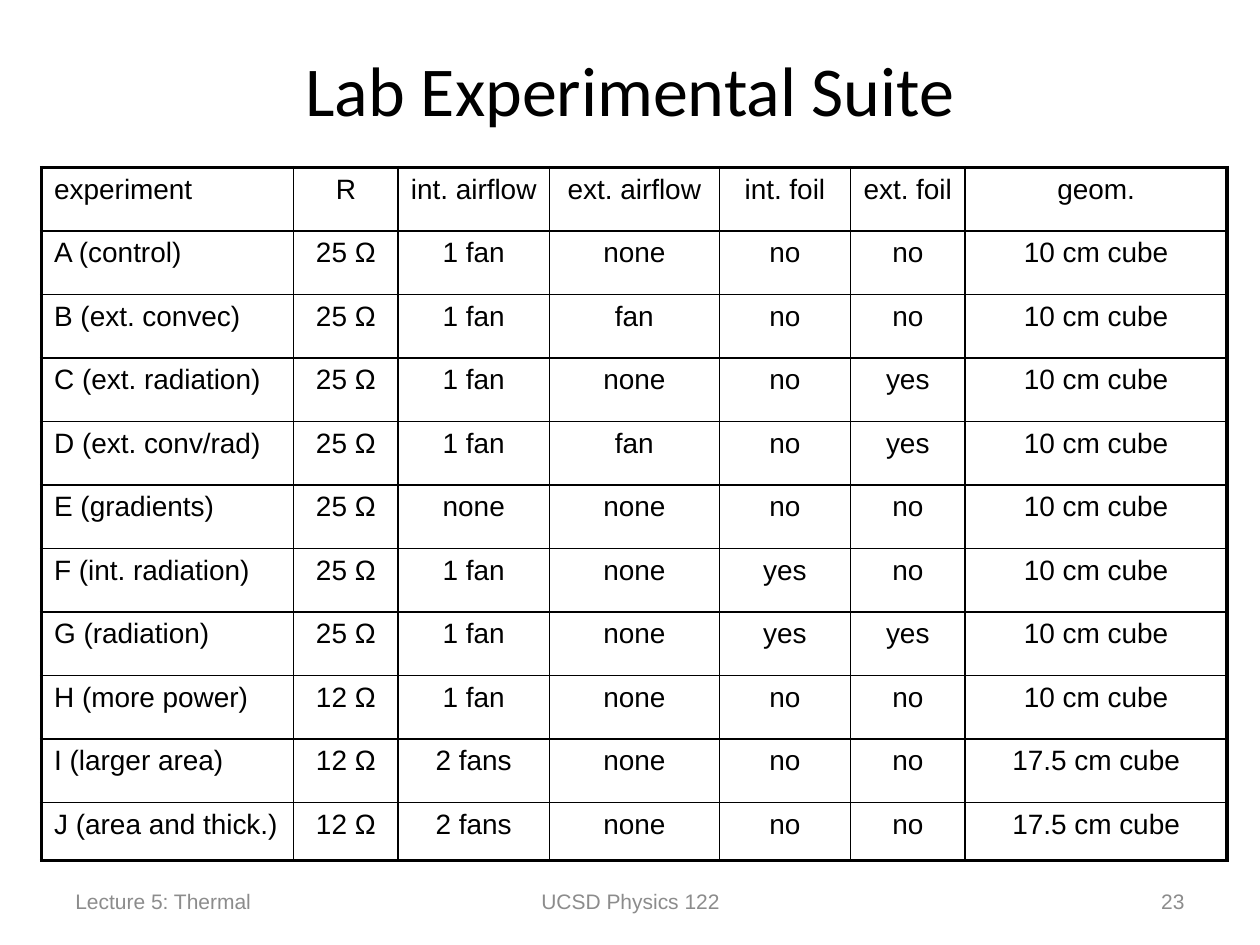
from typing import NamedTuple

from lxml.etree import SubElement
from pptx import Presentation
from pptx.dml.color import RGBColor
from pptx.enum.text import MSO_ANCHOR, PP_ALIGN
from pptx.oxml.ns import qn
from pptx.util import Inches, Pt

BLACK, GRAY = "000000", "8C8C8C"
THIN, THICK = 1, 2.25  # border widths in points

# Table content and measures in inches
HEADINGS = ("experiment", "R", "int. airflow", "ext. airflow",
            "int. foil", "ext. foil", "geom.")
COLUMN_WIDTHS = (2, 0.83, 1.2, 1.35, 1.04, 0.91, 2.08)
TABLE_HEIGHT, LAST_ROW_HEIGHT = 5.5, 0.46


class Experiment(NamedTuple):
    name: str
    resistance: str = "25 Ω"
    internal_airflow: str = "1 fan"
    external_airflow: str = "none"
    internal_foil: str = "no"
    external_foil: str = "no"
    geometry: str = "10 cm cube"


EXPERIMENTS = (
    Experiment("A (control)"),
    Experiment("B (ext. convec)", external_airflow="fan"),
    Experiment("C (ext. radiation)", external_foil="yes"),
    Experiment("D (ext. conv/rad)", external_airflow="fan", external_foil="yes"),
    Experiment("E (gradients)", internal_airflow="none"),
    Experiment("F (int. radiation)", internal_foil="yes"),
    Experiment("G (radiation)", internal_foil="yes", external_foil="yes"),
    Experiment("H (more power)", resistance="12 Ω"),
    Experiment("I (larger area)", "12 Ω", "2 fans", geometry="17.5 cm cube"),
    Experiment("J (area and thick.)", "12 Ω", "2 fans", geometry="17.5 cm cube"),
)


class Label(NamedTuple):
    text: str
    left: float
    top: float
    width: float
    height: float
    align: PP_ALIGN
    size: float = 12
    font: str = "Arial"
    color: str = GRAY


LABELS = (
    Label("Lab Experimental Suite", 0.75, 0.08, 8.5, 1.25, PP_ALIGN.CENTER,
          40, "Calibri", BLACK),
    Label("Lecture 5: Thermal", 0.5, 6.95, 2.33, 0.4, PP_ALIGN.LEFT),
    Label("UCSD Physics 122", 3.42, 6.95, 3.17, 0.4, PP_ALIGN.CENTER),
    Label("23", 7.17, 6.95, 2.33, 0.4, PP_ALIGN.RIGHT),
)


def hex_color(value: str) -> RGBColor:
    return RGBColor.from_string(value)


def write_text(frame, text: str, *, size: float, font: str = "Arial",
               color: str = BLACK, align: PP_ALIGN = PP_ALIGN.LEFT) -> None:
    para = frame.paragraphs[0]
    para.alignment = align
    span = para.add_run()
    span.text = text
    span.font.size = Pt(size)
    span.font.name = font
    span.font.color.rgb = hex_color(color)


def add_label(page, label: Label) -> None:
    box = page.shapes.add_textbox(Inches(label.left), Inches(label.top),
                                  Inches(label.width), Inches(label.height))
    frame = box.text_frame
    frame.word_wrap = True
    frame.vertical_anchor = MSO_ANCHOR.MIDDLE
    write_text(frame, label.text, size=label.size, font=label.font,
               color=label.color, align=label.align)


def set_borders(cell, **widths: float) -> None:
    """Draw the sides L, R, T, B (in that order) ahead of the cell's fill."""
    properties = cell._tc.get_or_add_tcPr()
    for position, (side, width) in enumerate(widths.items()):
        line = SubElement(properties, qn(f"a:ln{side}"), w=str(Pt(width)))
        fill = SubElement(line, qn("a:solidFill"))
        SubElement(fill, qn("a:srgbClr"), val=BLACK)
        properties.insert(position, line)


def add_experiment_table(page) -> None:
    rows = (HEADINGS, *EXPERIMENTS)
    last_row, last_column = len(rows) - 1, len(HEADINGS) - 1
    table = page.shapes.add_table(
        len(rows), len(HEADINGS), Inches(0.33), Inches(1.33),
        Inches(sum(COLUMN_WIDTHS)), Inches(TABLE_HEIGHT)).table
    table.first_row = table.horz_banding = False

    for column, width in zip(table.columns, COLUMN_WIDTHS):
        column.width = Inches(width)
    for row in table.rows:
        row.height = Inches((TABLE_HEIGHT - LAST_ROW_HEIGHT) / last_row)
    table.rows[last_row].height = Inches(LAST_ROW_HEIGHT)

    for r, values in enumerate(rows):
        for c, text in enumerate(values):
            cell = table.cell(r, c)
            cell.fill.background()
            write_text(cell.text_frame, text, size=16,
                       align=PP_ALIGN.CENTER if c else PP_ALIGN.LEFT)
            set_borders(cell,
                        L=THICK if c == 0 else THIN,
                        R=THICK if c == last_column else THIN,
                        T=THICK if r == 0 else THIN,
                        B=THICK if r == last_row else THIN)


def main() -> None:
    deck = Presentation()
    deck.slide_width, deck.slide_height = Inches(10), Inches(7.5)
    page = deck.slides.add_slide(deck.slide_layouts[6])

    # Title and footer
    for label in LABELS:
        add_label(page, label)

    # Table of experiments
    add_experiment_table(page)

    deck.save("out.pptx")


if __name__ == "__main__":
    main()
